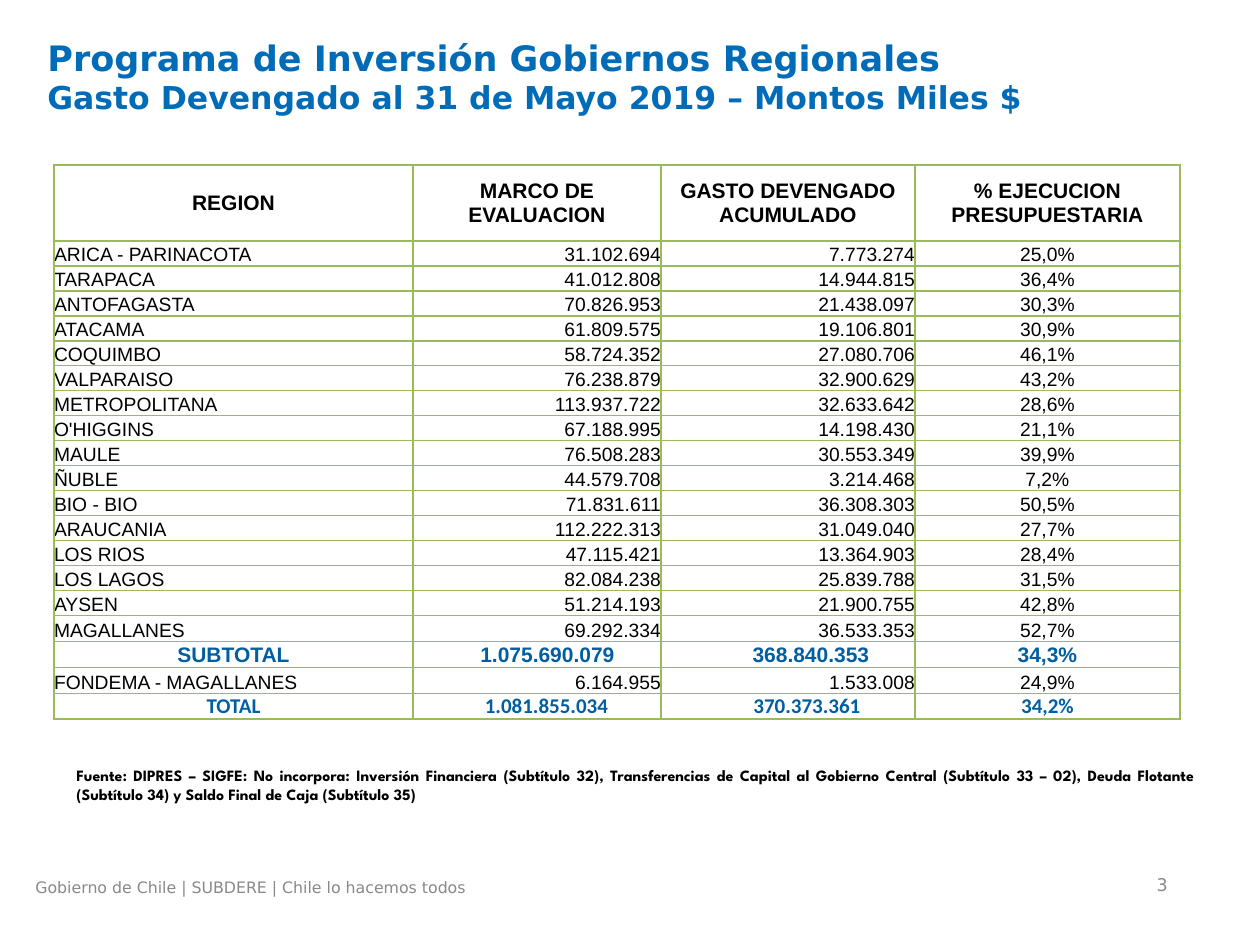
from lxml import etree
from pptx import Presentation
from pptx import util as u
from pptx.dml.color import RGBColor
from pptx.enum import text
from pptx.oxml import ns

SCALE = 914400 / 126
COLORS = {"title": "006CB7", "muted": "898989", "body": "000000",
          "total": "005FA1", "border": "9BBB59"}
LEFT, CENTER, RIGHT, JUSTIFY = (text.PP_ALIGN.LEFT, text.PP_ALIGN.CENTER,
                                text.PP_ALIGN.RIGHT, text.PP_ALIGN.JUSTIFY)
TOP, MIDDLE, BOTTOM = (text.MSO_ANCHOR.TOP, text.MSO_ANCHOR.MIDDLE,
                       text.MSO_ANCHOR.BOTTOM)

COLUMN_WIDTHS = [359, 248, 254, 265]
ROW_HEIGHTS = [76] + [25] * 15 + [26] * 4
HEADERS = ["REGION", "MARCO DE EVALUACION", "GASTO DEVENGADO ACUMULADO",
           "% EJECUCION PRESUPUESTARIA"]
REGIONS = [
    ("ARICA - PARINACOTA", "31.102.694", "7.773.274", "25,0%"),
    ("TARAPACA", "41.012.808", "14.944.815", "36,4%"),
    ("ANTOFAGASTA", "70.826.953", "21.438.097", "30,3%"),
    ("ATACAMA", "61.809.575", "19.106.801", "30,9%"),
    ("COQUIMBO", "58.724.352", "27.080.706", "46,1%"),
    ("VALPARAISO", "76.238.879", "32.900.629", "43,2%"),
    ("METROPOLITANA", "113.937.722", "32.633.642", "28,6%"),
    ("O'HIGGINS", "67.188.995", "14.198.430", "21,1%"),
    ("MAULE", "76.508.283", "30.553.349", "39,9%"),
    ("ÑUBLE", "44.579.708", "3.214.468", "7,2%"),
    ("BIO - BIO", "71.831.611", "36.308.303", "50,5%"),
    ("ARAUCANIA", "112.222.313", "31.049.040", "27,7%"),
    ("LOS RIOS", "47.115.421", "13.364.903", "28,4%"),
    ("LOS LAGOS", "82.084.238", "25.839.788", "31,5%"),
    ("AYSEN", "51.214.193", "21.900.755", "42,8%"),
    ("MAGALLANES", "69.292.334", "36.533.353", "52,7%"),
]
SUBTOTAL = ("SUBTOTAL", "1.075.690.079", "368.840.353", "34,3%")
FONDEMA = ("FONDEMA - MAGALLANES", "6.164.955", "1.533.008", "24,9%")
TOTAL = ("TOTAL", "1.081.855.034", "370.373.361", "34,2%")


def px(value):
    return u.Emu(round(value * SCALE))


def write_text(paragraph, content, size=11, font="Arial", color="body",
               bold=False, align=LEFT):
    paragraph.alignment = align
    run = paragraph.add_run()
    run.text = content
    run.font.size = u.Pt(size)
    run.font.name = font
    run.font.bold = bold
    run.font.color.rgb = RGBColor.from_string(COLORS[color])


def add_text_box(slide, left, top, width, height, anchor=TOP):
    box = slide.shapes.add_textbox(px(left), px(top), px(width), px(height))
    box.text_frame.word_wrap = True
    box.text_frame.vertical_anchor = anchor
    return box.text_frame.paragraphs[0]


def set_borders(cell):
    properties = cell._tc.get_or_add_tcPr()
    for position, side in enumerate(("lnL", "lnR", "lnT", "lnB")):
        line = etree.Element(ns.qn(f"a:{side}"), w=str(u.Pt(1)))
        fill = etree.SubElement(line, ns.qn("a:solidFill"))
        etree.SubElement(fill, ns.qn("a:srgbClr"), val=COLORS["border"])
        properties.insert(position, line)


def fill_row(row, values, aligns, indents=(0, 0, 0, 0), anchor=BOTTOM, **style):
    for cell, value, align, indent in zip(row.cells, values, aligns, indents):
        cell.fill.background()
        cell.margin_left = px(indent)
        cell.margin_right = cell.margin_top = cell.margin_bottom = 0
        cell.vertical_anchor = anchor
        write_text(cell.text_frame.paragraphs[0], value, align=align, **style)
        set_borders(cell)


def add_budget_table(slide):
    frame = slide.shapes.add_table(
        len(ROW_HEIGHTS), len(COLUMN_WIDTHS), px(54), px(165),
        px(sum(COLUMN_WIDTHS)), px(sum(ROW_HEIGHTS)))
    table = frame.table
    table.first_row = table.horz_banding = False
    for column, width in zip(table.columns, COLUMN_WIDTHS):
        column.width = px(width)
    for row, height in zip(table.rows, ROW_HEIGHTS):
        row.height = px(height)

    centered = [CENTER] * 4
    regular = [LEFT, RIGHT, RIGHT, CENTER]
    emphasis = {"size": 12, "color": "total", "bold": True}
    rows = list(table.rows)
    fill_row(rows[0], HEADERS, centered, anchor=MIDDLE, size=12, bold=True)
    for row, region in zip(rows[1:], REGIONS):
        fill_row(row, region, regular)
    fill_row(rows[-3], SUBTOTAL, centered, (0, 21, 46, 0), **emphasis)
    fill_row(rows[-2], FONDEMA, regular)
    fill_row(rows[-1], TOTAL, centered, (0, 19, 38, 0), font="Calibri", **emphasis)


def add_title(slide):
    title = add_text_box(slide, 35, 30, 1096, 118)
    style = {"font": "DejaVu Sans", "color": "title", "bold": True}
    write_text(title, "Programa de Inversión Gobiernos Regionales", size=20, **style)
    title.add_line_break()
    write_text(title, "Gasto Devengado al 31 de Mayo 2019 – Montos Miles $",
               size=18, **style)


def add_footer(slide):
    style = {"font": "DejaVu Sans", "color": "muted"}
    write_text(add_text_box(slide, 886, 872, 294, 26, MIDDLE), "3",
               size=10, align=RIGHT, **style)
    write_text(add_text_box(slide, 23, 872, 816, 34),
               "Gobierno de Chile | SUBDERE | Chile lo hacemos todos",
               size=9, **style)


def add_source_note(slide):
    write_text(add_text_box(slide, 64, 760, 1142, 50),
               "Fuente: DIPRES – SIGFE: No incorpora: Inversión Financiera "
               "(Subtítulo 32), Transferencias de Capital al Gobierno Central "
               "(Subtítulo 33 – 02), Deuda Flotante (Subtítulo 34) y Saldo "
               "Final de Caja (Subtítulo 35)",
               size=9, font="League Spartan", bold=True, align=JUSTIFY)


def main():
    presentation = Presentation()
    presentation.slide_width = px(1260)
    presentation.slide_height = px(945)
    slide = presentation.slides.add_slide(presentation.slide_layouts[6])
    add_title(slide)
    add_budget_table(slide)
    add_source_note(slide)
    add_footer(slide)
    presentation.save("out.pptx")


if __name__ == "__main__":
    main()
